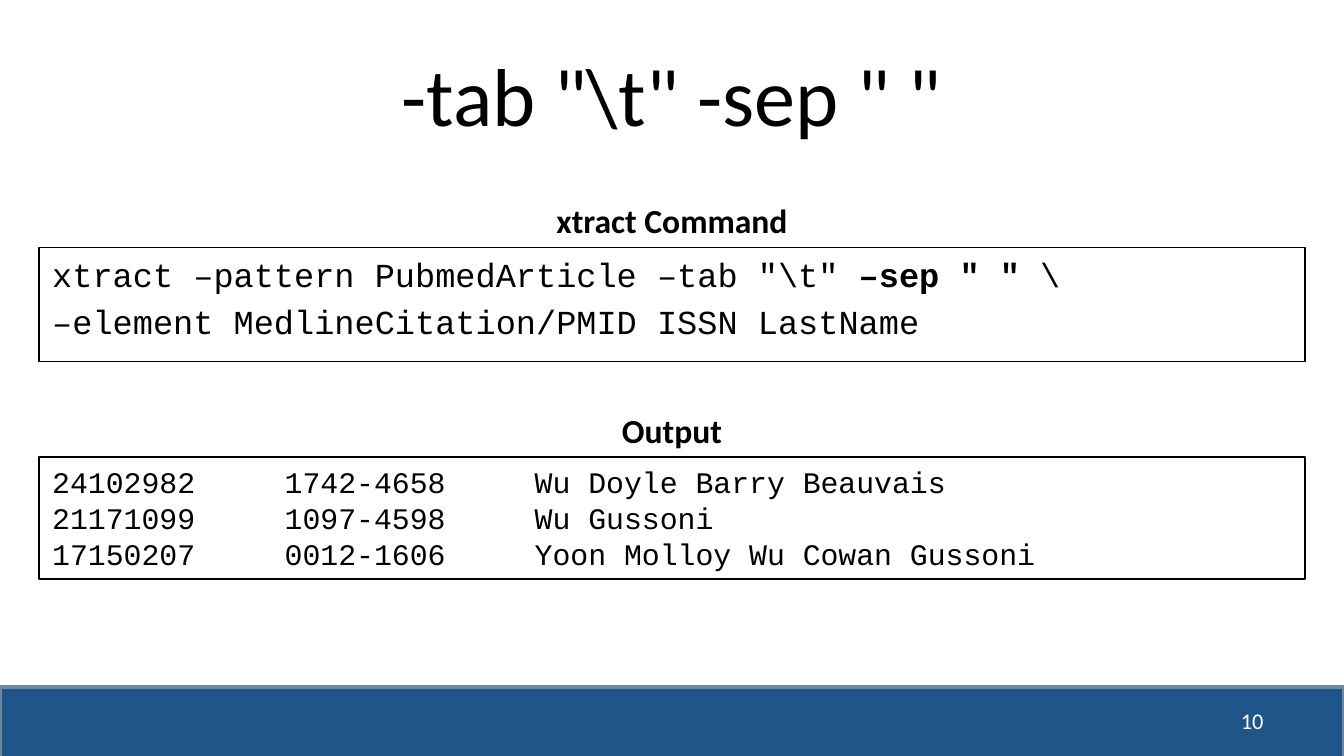
from pptx import Presentation, util as u
from pptx.dml.color import RGBColor
from pptx.enum import shapes, text
from pptx.oxml import parse_xml
from pptx.oxml.ns import nsdecls

# Content: each paragraph is a list of (words, bold) runs
TITLE = '-tab "\\t" -sep " "'
PAGE = "10"
COMMAND = [
    [('xtract –pattern PubmedArticle –tab "\\t" ', False),
     ('–sep " " ', True), ("\\", False)],
    [("–element MedlineCitation/PMID ISSN LastName", False)],
]
ROWS = [
    ("24102982", "1742-4658", "Wu Doyle Barry Beauvais"),
    ("21171099", "1097-4598", "Wu Gussoni"),
    ("17150207", "0012-1606", "Yoon Molloy Wu Cowan Gussoni"),
]
OUTPUT = [[("\t".join(row), False)] for row in ROWS]
TABS = (1.73, 3.59)
# Heading, paragraphs, box top, box height, text size, gap, fill, tab stops
PANELS = [
    ("Output", OUTPUT, 3.4, 0.91, 16, 0, None, TABS),
    ("xtract Command", COMMAND, 1.84, 0.85, 18, 3.6, "white", ()),
]
COLORS = {"black": "000000", "white": "FFFFFF", "blue": "20558A", "edge": "6D879B"}
ALIGN, ANCHOR = text.PP_ALIGN, text.MSO_ANCHOR
WIDTH, MARGIN = 10, 0.29
HEAD_W, HEAD_H = 2.09, 0.4


def color(name):
    return RGBColor.from_string(COLORS[name])


def write(shape, paras, size, font="Calibri", ink="black", align=ALIGN.LEFT,
          anchor=ANCHOR.TOP, gap=0, tabs=()):
    frame = shape.text_frame
    frame.word_wrap = True
    frame.vertical_anchor = anchor
    for i, runs in enumerate(paras):
        para = frame.paragraphs[0] if i == 0 else frame.add_paragraph()
        para.alignment = align
        if i and gap:
            para.space_before = u.Pt(gap)
        if tabs:
            stops = "".join(f'<a:tab pos="{u.Inches(x)}" algn="l"/>' for x in tabs)
            para._p.get_or_add_pPr().append(
                parse_xml(f'<a:tabLst {nsdecls("a")}>{stops}</a:tabLst>'))
        for words, bold in runs:
            run = para.add_run()
            run.text = words
            run.font.name, run.font.size, run.font.bold = font, u.Pt(size), bold
            run.font.color.rgb = color(ink)


def rect(slide, at, fill, line, width):
    box = slide.shapes.add_shape(shapes.MSO_SHAPE.RECTANGLE, *map(u.Inches, at))
    box.shadow.inherit = False
    if fill:
        box.fill.solid()
        box.fill.fore_color.rgb = color(fill)
    else:
        box.fill.background()
    box.line.color.rgb = color(line)
    box.line.width = u.Pt(width)
    return box


def label(slide, at):
    return slide.shapes.add_textbox(*map(u.Inches, at))


def main():
    deck = Presentation()
    deck.slide_width = u.Inches(WIDTH)
    deck.slide_height = deck.slide_width * 9 // 16
    slide = deck.slides.add_slide(deck.slide_layouts[5])

    # Footer bar and page number
    rect(slide, (0, 5.11, WIDTH, 0.58), "blue", "edge", 2)
    write(label(slide, (7.17, 5.21, 2.33, 0.3)), [[(PAGE, False)]], 12,
          ink="white", align=ALIGN.RIGHT, anchor=ANCHOR.MIDDLE)

    # Title
    title = slide.shapes.title
    title.left, title.top, title.width, title.height = map(
        u.Inches, (0.5, 0.23, 9, 0.94))
    write(title, [[(TITLE, False)]], 44, align=ALIGN.CENTER, anchor=ANCHOR.MIDDLE)

    # Framed code panels, each under a centred heading
    for head, paras, top, high, size, gap, fill, tabs in PANELS:
        box = rect(slide, (MARGIN, top, WIDTH - 2 * MARGIN, high), fill, "black", 0.75)
        write(box, paras, size, font="Courier New", gap=gap, tabs=tabs)
        at = ((WIDTH - HEAD_W) / 2, top - HEAD_H, HEAD_W, HEAD_H)
        write(label(slide, at), [[(head, True)]], 18, align=ALIGN.CENTER)

    deck.save("out.pptx")


if __name__ == "__main__":
    main()
